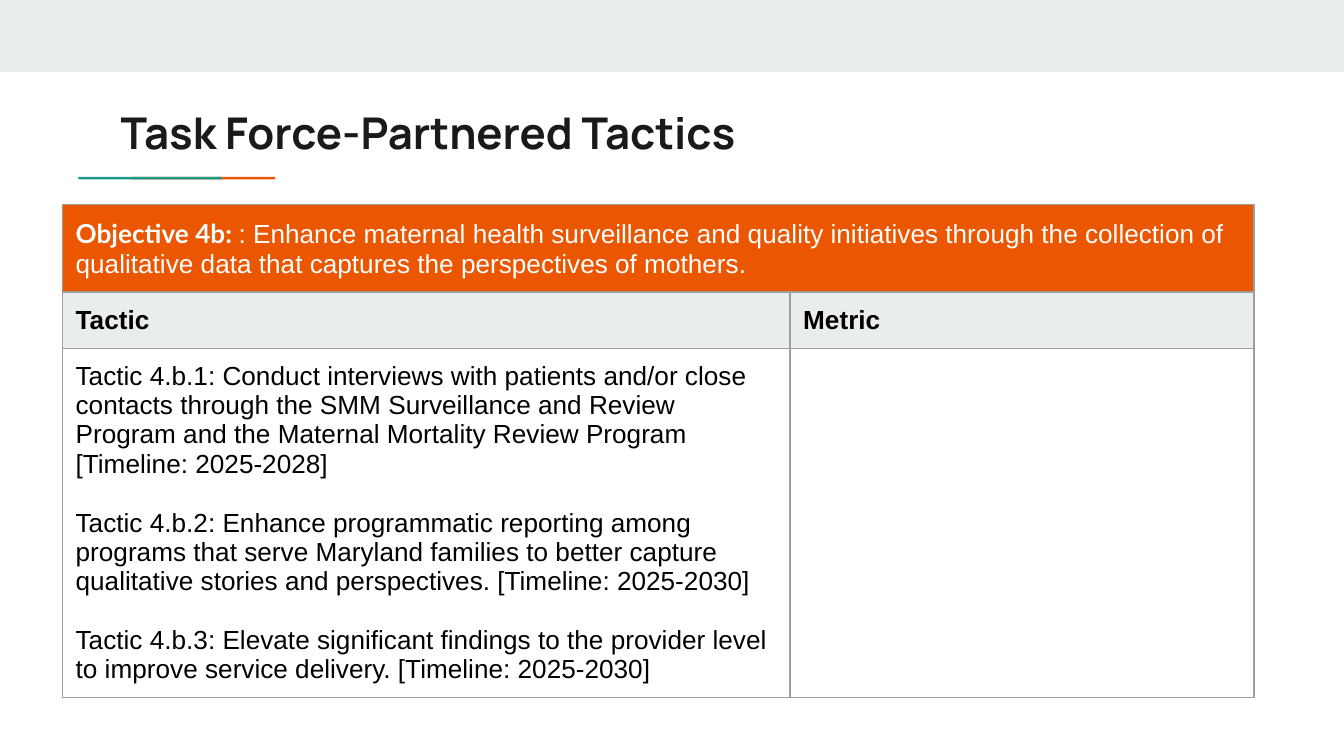
from lxml import etree
from pptx import Presentation
from pptx import util as u
from pptx.dml.color import RGBColor
from pptx.enum import shapes, text
from pptx.oxml.ns import qn

ORANGE, GREEN, PALE, GREY = "EB5600", "1A9988", "E9EDEE", "9E9E9E"


def paint(fill, colour):
    fill.solid()
    fill.fore_color.rgb = RGBColor.from_string(colour)


def style(run, colour, size=14, font="Arial", bold=False):
    run.font.name, run.font.size, run.font.bold = font, u.Pt(size), bold
    run.font.color.rgb = RGBColor.from_string(colour)


deck = Presentation()
deck.slide_width, deck.slide_height = u.Cm(25.4), u.Cm(14.29)
slide = deck.slides.add_slide(deck.slide_layouts[5])

# Top band, and two overlapping upright bars turned flat as the title rule
for left, top, width, height, turn, colour in [
    (0, 0, 25.4, 1.36, 0, PALE),
    (3.82, 2.01, 0.05, 2.71, 270, ORANGE),
    (2.81, 2.01, 0.05, 2.71, 270, GREEN),
]:
    bar = slide.shapes.add_shape(
        shapes.MSO_SHAPE.RECTANGLE, u.Cm(left), u.Cm(top), u.Cm(width), u.Cm(height))
    bar.rotation = turn
    bar.shadow.inherit = False
    paint(bar.fill, colour)
    bar.line.fill.background()

# Title
title = slide.shapes.title
title.left, title.top, title.width, title.height = u.Cm(2.03), u.Cm(1.75), u.Cm(21.36), u.Cm(1.5)
heading = title.text_frame
heading.text = "Task Force-Partnered Tactics"
heading.vertical_anchor = text.MSO_ANCHOR.MIDDLE
heading.margin_left = heading.margin_right = u.Cm(0.25)
heading.margin_top = heading.margin_bottom = u.Cm(0.25)
heading.paragraphs[0].alignment = text.PP_ALIGN.LEFT
style(heading.paragraphs[0].runs[0], "1A1A1A", 23.4, "Manrope", True)

# Objective table
tactics = [
    "Tactic 4.b.1: Conduct interviews with patients and/or close contacts through the SMM "
    "Surveillance and Review Program and the Maternal Mortality Review Program "
    "[Timeline: 2025-2028]",
    "Tactic 4.b.2: Enhance programmatic reporting among programs that serve Maryland families "
    "to better capture qualitative stories and perspectives. [Timeline: 2025-2030]",
    "Tactic 4.b.3: Elevate significant findings to the provider level to improve service "
    "delivery. [Timeline: 2025-2030]",
]
rows = [["", ""], ["Tactic", "Metric"], ["\n".join(tactics), ""]]
row_fills = [ORANGE, PALE, "FFFFFF"]
row_heights = [1.65, 1.06, 6.61]
plan = slide.shapes.add_table(
    3, 2, u.Cm(1.18), u.Cm(3.87), u.Cm(22.52), u.Cm(sum(row_heights))).table
plan.columns[0].width, plan.columns[1].width = u.Cm(13.75), u.Cm(8.77)

for r, row in enumerate(rows):
    plan.rows[r].height = u.Cm(row_heights[r])
    for c, words in enumerate(row):
        cell = plan.cell(r, c)
        cell.margin_left = cell.margin_right = u.Cm(0.25)
        cell.margin_top = cell.margin_bottom = u.Cm(0.25)
        for side in ("a:lnL", "a:lnR", "a:lnT", "a:lnB"):
            edge = etree.SubElement(cell._tc.get_or_add_tcPr(), qn(side), w=str(u.Pt(0.75)))
            ink = etree.SubElement(edge, qn("a:solidFill"))
            etree.SubElement(ink, qn("a:srgbClr"), val=GREY)
        paint(cell.fill, row_fills[r])
        cell.text_frame.text = words
        for i, paragraph in enumerate(cell.text_frame.paragraphs):
            if i:
                paragraph.space_before = u.Pt(15.8)
            for run in paragraph.runs:
                style(run, "000000", bold=r == 1)

# Objective row across both columns
plan.cell(0, 0).merge(plan.cell(0, 1))
objective = plan.cell(0, 0).text_frame.paragraphs[0]
for words, font, bold in [
    ("Objective 4b: ", "Lato", True),
    (": Enhance maternal health surveillance and quality initiatives through the collection of "
     "qualitative data that captures the perspectives of mothers.", "Arial", False),
]:
    run = objective.add_run()
    run.text = words
    style(run, "FFFFFF", font=font, bold=bold)

deck.save("out.pptx")
